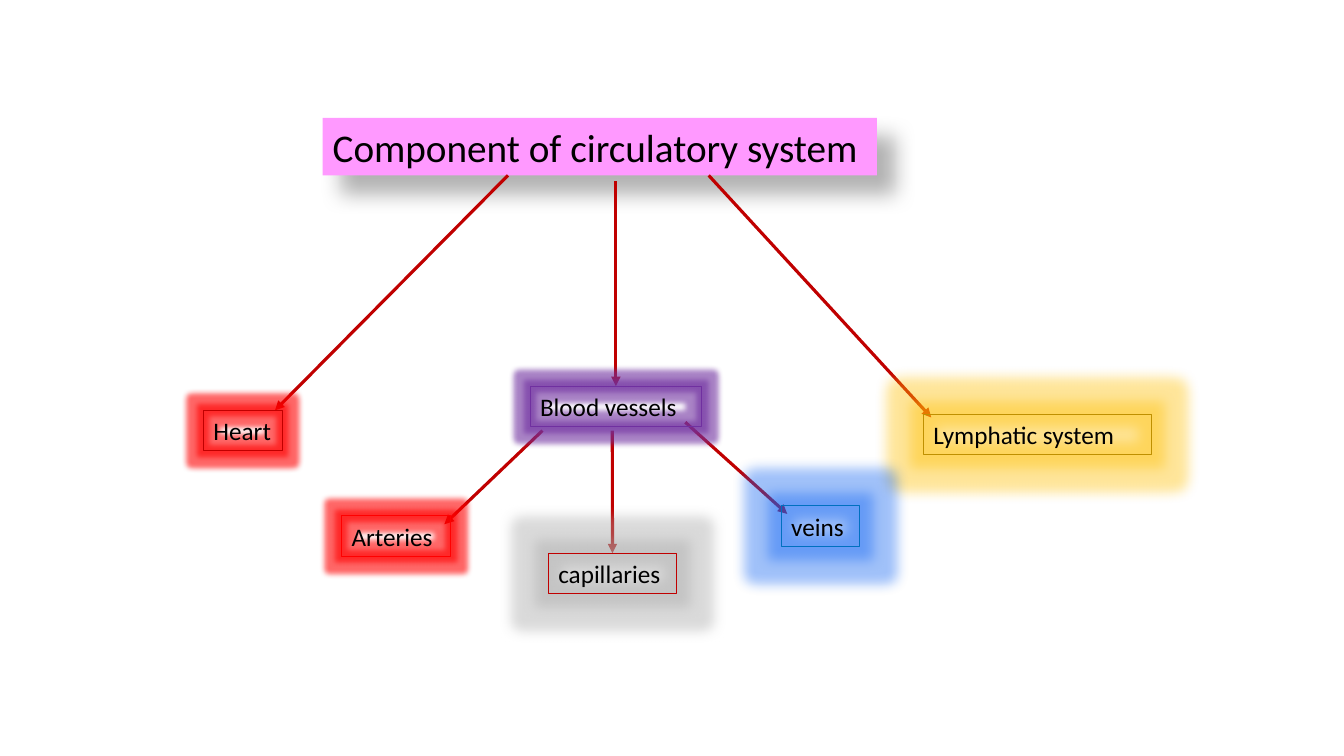
from lxml import etree
from pptx import Presentation
from pptx.dml.color import RGBColor
from pptx.enum.shapes import MSO_CONNECTOR
from pptx.enum.text import MSO_ANCHOR, MSO_AUTO_SIZE, PP_ALIGN
from pptx.oxml.ns import qn
from pptx.util import Cm, Pt

STRAIGHT = MSO_CONNECTOR.STRAIGHT
LEFT = PP_ALIGN.LEFT
MIDDLE = MSO_ANCHOR.MIDDLE
NO_AUTOFIT = MSO_AUTO_SIZE.NONE
TOP_SIDE = 0

# Content: lengths in centimetres, glow radius in points, opacity in percent
TITLE = "Component of circulatory system"
TITLE_AREA = (8.13, 2.97, 13.97, 1.45)
BOX_HEIGHT = 1.02
ARROW_COLOUR = "C00000"

# text, left, top, width, line colour, (glow colour, radius, opacity)
PARTS = [
    ("Heart", 5.13, 10.34, 1.98, "C00000", ("FF0000", 8, 60)),
    ("Blood vessels", 13.36, 9.73, 4.32, "7030A0", ("7030A0", 8, 60)),
    ("Lymphatic system", 23.27, 10.44, 5.74, "BF9000", ("FFC000", 18, 40)),
    ("Arteries", 8.61, 13.0, 2.74, "FF0000", ("FF0000", 8, 60)),
    ("capillaries", 13.82, 13.94, 3.23, "C00000", ("A5A5A5", 18, 40)),
    ("veins", 19.69, 12.75, 1.98, "0070C0", ("1164F3", 18, 40)),
]

# part pointed at, start, end
ARROWS = [
    ("Arteries", (13.67, 10.85), (11.2, 13.21)),
    ("capillaries", (15.43, 10.85), (15.43, 13.94)),
    ("veins", (17.27, 10.64), (19.84, 12.95)),
    ("Heart", (12.8, 4.42), (6.93, 10.34)),
    ("Blood vessels", (15.52, 4.57), (15.52, 9.73)),
    ("Lymphatic system", (17.86, 4.42), (23.47, 10.52)),
]
JOINED = ("Blood vessels", "capillaries")


def colour(code):
    return RGBColor.from_string(code)


def add_effect(shape, kind=None, code=None, opacity=100, **settings):
    """Give the shape one effect, or an empty effect list."""
    effects = etree.SubElement(shape._element.spPr, qn("a:effectLst"))
    if kind:
        effect = etree.SubElement(effects, qn("a:" + kind))
        for name, value in settings.items():
            effect.set(name, str(value))
        tint = etree.SubElement(effect, qn("a:srgbClr"), val=code)
        etree.SubElement(tint, qn("a:alpha"), val=str(opacity * 1000))


def write(shape, text, size):
    frame = shape.text_frame
    frame.text = text
    frame.word_wrap = True
    frame.auto_size = NO_AUTOFIT
    frame.vertical_anchor = MIDDLE
    frame.margin_right = 0
    para = frame.paragraphs[0]
    para.alignment = LEFT
    font = para.runs[0].font
    font.name, font.size = "Calibri", Pt(size)
    font.color.rgb = colour("000000")


deck = Presentation()
deck.slide_width, deck.slide_height = Cm(33.87), Cm(19.05)
page = deck.slides.add_slide(deck.slide_layouts[5])

# Title with its soft shadow
title = page.shapes.title
title.left, title.top, title.width, title.height = map(Cm, TITLE_AREA)
title.fill.solid()
title.fill.fore_color.rgb = colour("FF99FF")
write(title, TITLE, 28)
add_effect(title, "outerShdw", "000000", 30, blurRad=Pt(15), dist=Pt(18),
           dir=45 * 60000, algn="tl", rotWithShape=0)

# Arrows, behind the boxes
arrows = {}
for target, start, end in ARROWS:
    arrow = page.shapes.add_connector(STRAIGHT, *map(Cm, start + end))
    arrow.line.color.rgb = colour(ARROW_COLOUR)
    arrow.line.width = Pt(2.25)
    etree.SubElement(arrow.line._get_or_add_ln(), qn("a:tailEnd"), type="triangle")
    add_effect(arrow)
    arrows[target] = arrow

# Glowing boxes
for text, left, top, width, line_code, (glow_code, radius, opacity) in PARTS:
    box = page.shapes.add_textbox(Cm(left), Cm(top), Cm(width), Cm(BOX_HEIGHT))
    box.line.color.rgb = colour(line_code)
    box.line.width = Pt(0.75)
    write(box, text, 18)
    add_effect(box, "glow", glow_code, opacity, rad=Pt(radius))
    if text in JOINED:
        arrows[text].end_connect(box, TOP_SIDE)

deck.save("out.pptx")
